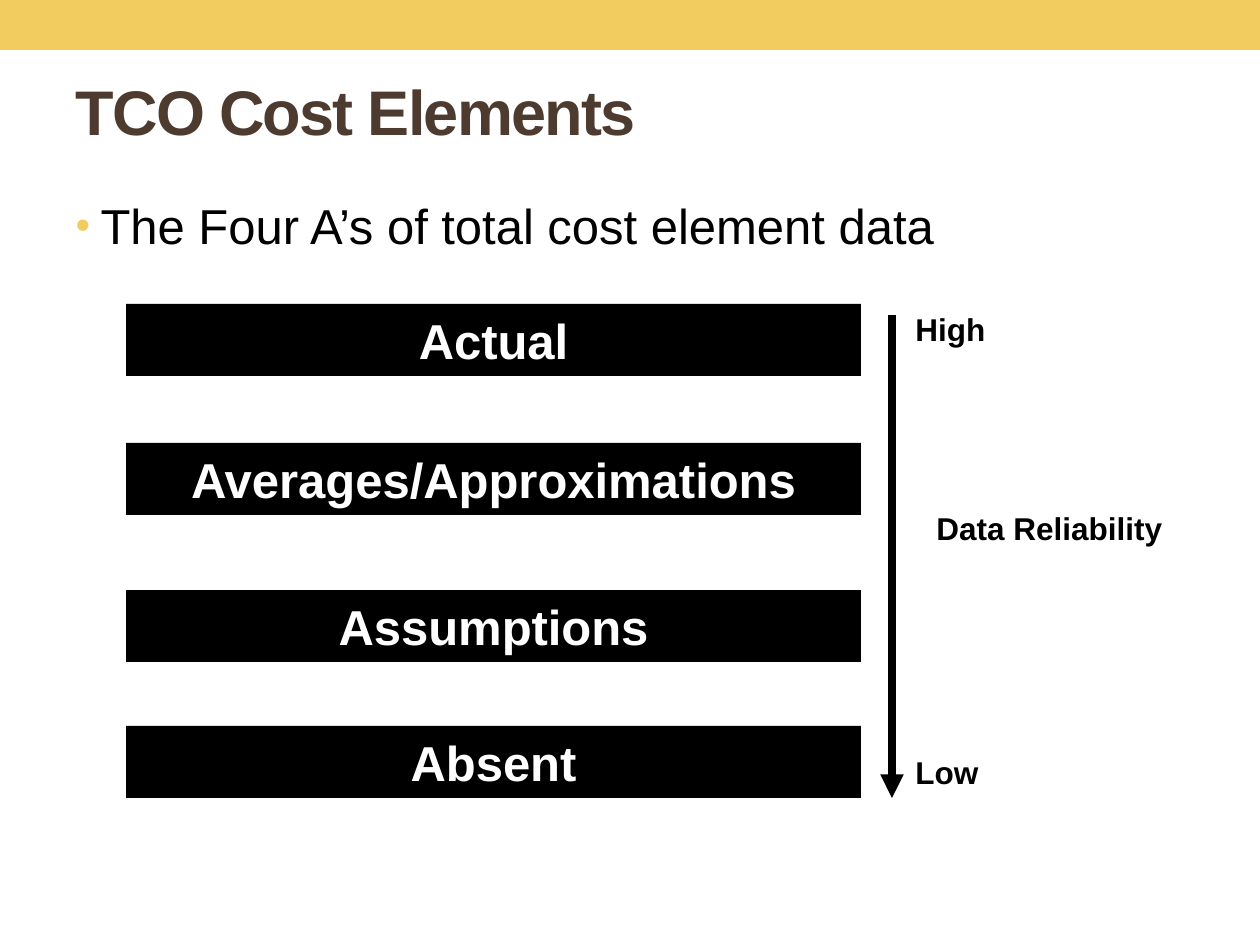
from dataclasses import dataclass

from lxml import etree
from pptx import Presentation, util as u
from pptx.dml.color import RGBColor
from pptx.enum import shapes, text
from pptx.oxml import ns

PX_PER_INCH = 126


@dataclass(frozen=True)
class Theme:
    font: str = "Arial"
    band: str = "F3CC5F"
    title: str = "4E3B30"
    ink: str = "000000"
    paper: str = "FFFFFF"
    title_size: int = 36
    body_size: int = 28
    label_size: int = 18
    arrow_width: float = 4.5


THEME = Theme()
BOX_LEFT, BOX_WIDTH, BOX_HEIGHT = 126, 735, 72
LEVELS = [("Actual", 304), ("Averages/Approximations", 443),
          ("Assumptions", 590), ("Absent", 726)]
LABELS = [("High", 903, 304, 168), ("Low", 903, 747, 168),
          ("Data Reliability", 924, 503, 284)]


def px(length):
    return u.Emu(round(length * u.Inches(1) / PX_PER_INCH))


def place(shape, left, top, width, height):
    frame = {"left": left, "top": top, "width": width, "height": height}
    for name, length in frame.items():
        setattr(shape, name, px(length))


def write(shape, words, size, color, bold=True, align=text.PP_ALIGN.LEFT,
          anchor=text.MSO_ANCHOR.TOP, space=0.1):
    """Fill the shape with one paragraph; space before is a share of the size."""
    frame = shape.text_frame
    settings = {"word_wrap": True, "auto_size": text.MSO_AUTO_SIZE.NONE,
                "vertical_anchor": anchor}
    for name, value in settings.items():
        setattr(frame, name, value)
    para = frame.paragraphs[0]
    para.alignment = align
    para.space_before = u.Pt(size * space)
    span = para.add_run()
    span.text = words
    for name, value in {"name": THEME.font, "size": u.Pt(size), "bold": bold}.items():
        setattr(span.font, name, value)
    span.font.color.rgb = RGBColor.from_string(color)
    return para


def add_block(page, left, top, width, height, color):
    box = page.shapes.add_shape(shapes.MSO_SHAPE.RECTANGLE,
                                px(left), px(top), px(width), px(height))
    box.shadow.inherit = False
    box.fill.solid()
    box.fill.fore_color.rgb = RGBColor.from_string(color)
    box.line.fill.background()
    return box


def add_title(page, words):
    title = page.shapes.title
    place(title, 63, 21, 1124, 179)
    para = write(title, words, THEME.title_size, THEME.title,
                 anchor=text.MSO_ANCHOR.MIDDLE, space=0)
    para.runs[0].font._element.set("spc", "-100")


def add_bullet(page, words):
    body = page.placeholders[1]
    place(body, 63, 189, 1134, 672)
    para = write(body, words, THEME.body_size, THEME.ink, bold=False)
    props = para._p.get_or_add_pPr()
    indent = px(25)
    props.set("marL", str(indent))
    props.set("indent", str(-indent))
    color = etree.SubElement(props, ns.qn("a:buClr"))
    etree.SubElement(color, ns.qn("a:srgbClr"), val=THEME.band)
    etree.SubElement(props, ns.qn("a:buSzPct"), val="85000")
    etree.SubElement(props, ns.qn("a:buFont"), typeface=THEME.font)
    etree.SubElement(props, ns.qn("a:buChar"), char="•")


def add_level(page, words, top):
    box = add_block(page, BOX_LEFT, top, BOX_WIDTH, BOX_HEIGHT, THEME.ink)
    write(box, words, THEME.body_size, THEME.paper, align=text.PP_ALIGN.CENTER)


def add_label(page, words, left, top, width):
    label = page.shapes.add_textbox(px(left), px(top), px(width), px(50))
    write(label, words, THEME.label_size, THEME.ink)


def add_down_arrow(page, x, top, bottom):
    arrow = page.shapes.add_connector(shapes.MSO_CONNECTOR.STRAIGHT,
                                      px(x), px(top), px(x), px(bottom))
    arrow.line.color.rgb = RGBColor.from_string(THEME.ink)
    arrow.line.width = u.Pt(THEME.arrow_width)
    etree.SubElement(arrow.line._get_or_add_ln(), ns.qn("a:tailEnd"), type="triangle")
    etree.SubElement(arrow._element.spPr, ns.qn("a:effectLst"))


def main():
    deck = Presentation()
    deck.slide_width, deck.slide_height = px(1260), px(945)
    page = deck.slides.add_slide(deck.slide_layouts[1])
    add_block(page, 0, 0, 1260, 50, THEME.band)
    add_title(page, "TCO Cost Elements")
    add_bullet(page, "The Four A’s of total cost element data")
    for words, top in LEVELS:
        add_level(page, words, top)
    add_down_arrow(page, 892, 315, 798)
    for label in LABELS:
        add_label(page, *label)
    deck.save("out.pptx")


if __name__ == "__main__":
    main()
